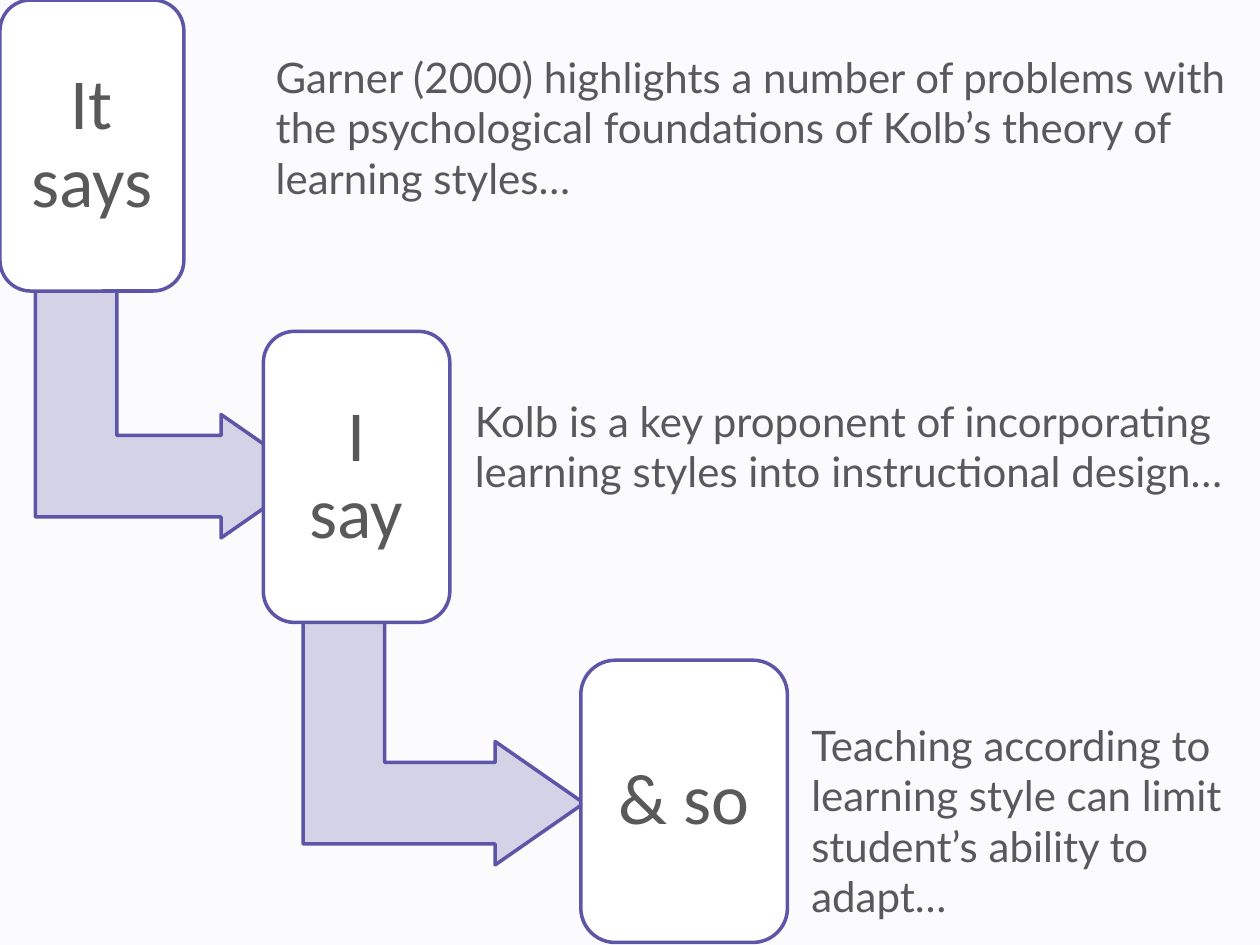
from pptx import Presentation
from pptx.dml.color import RGBColor
from pptx.enum.shapes import MSO_SHAPE
from pptx.enum.text import MSO_ANCHOR, MSO_AUTO_SIZE, PP_ALIGN
from pptx.util import Inches, Pt

ROUNDED = MSO_SHAPE.ROUNDED_RECTANGLE
BENT_ARROW = MSO_SHAPE.BENT_UP_ARROW
MIDDLE = MSO_ANCHOR.MIDDLE
CENTER = PP_ALIGN.CENTER
GROW = MSO_AUTO_SIZE.SHAPE_TO_FIT_TEXT

COLORS = {
    "background": "FBFAFC",
    "card": "FFFFFF",
    "arrow": "D3D2E6",
    "outline": "5D55A7",
    "text": "595959",
}

STEPS = [
    ("It says", (0, 0, 1.46, 2.31),
     "Garner (2000) highlights a number of problems with the psychological "
     "foundations of Kolb’s theory of learning styles…", (2.09, 0.36, 7.8, 1.31)),
    ("I say", (2.09, 2.63, 1.48, 2.31),
     "Kolb is a key proponent of incorporating learning styles into "
     "instructional design…", (3.67, 3.09, 6.39, 0.91)),
    ("& so", (4.61, 5.24, 1.64, 2.24),
     "Teaching according to learning style can limit student’s ability to "
     "adapt…", (6.34, 5.66, 3.72, 1.72)),
]
ARROWS = [(0.39, 2.2, 1.96, 2.18), (2.54, 4.77, 1.96, 2.23)]


def color(name):
    return RGBColor.from_string(COLORS[name])


class StepSlide:
    label_font, label_size = "Calibri", 41
    note_font, note_size = "Lato", 24
    outline_width = 2
    inset = 0.17

    def __init__(self, slide):
        self.slide = slide
        backdrop = slide.background.fill
        backdrop.solid()
        backdrop.fore_color.rgb = color("background")

    def outlined(self, preset, box, fill):
        figure = self.slide.shapes.add_shape(preset, *map(Inches, box))
        figure.shadow.inherit = False
        figure.fill.solid()
        figure.fill.fore_color.rgb = color(fill)
        figure.line.color.rgb = color("outline")
        figure.line.width = Pt(self.outline_width)
        return figure

    def set_words(self, paragraph, words, font, size):
        paragraph.text = words
        paragraph.font.name = font
        paragraph.font.size = Pt(size)
        paragraph.font.color.rgb = color("text")

    def arrow(self, box):
        bend = self.outlined(BENT_ARROW, box, "arrow")
        bend.rotation = 90
        for index, value in enumerate((0.33, 0.25, 0.36)):
            bend.adjustments[index] = value

    def card(self, label, box):
        frame = self.outlined(ROUNDED, box, "card").text_frame
        frame.word_wrap = True
        frame.vertical_anchor = MIDDLE
        frame.margin_left = frame.margin_right = Inches(self.inset)
        frame.margin_top = frame.margin_bottom = Inches(self.inset)
        paragraph = frame.paragraphs[0]
        paragraph.alignment = CENTER
        paragraph.line_spacing = 0.9
        self.set_words(paragraph, label, self.label_font, self.label_size)

    def note(self, words, box):
        frame = self.slide.shapes.add_textbox(*map(Inches, box)).text_frame
        frame.word_wrap = True
        frame.auto_size = GROW
        self.set_words(frame.paragraphs[0], words, self.note_font, self.note_size)


def main():
    deck = Presentation()
    deck.slide_width, deck.slide_height = Inches(10), Inches(7.5)
    page = StepSlide(deck.slides.add_slide(deck.slide_layouts[6]))
    for box in ARROWS:
        page.arrow(box)
    for label, card_box, words, note_box in STEPS:
        page.card(label, card_box)
        page.note(words, note_box)
    deck.save("out.pptx")


if __name__ == "__main__":
    main()
